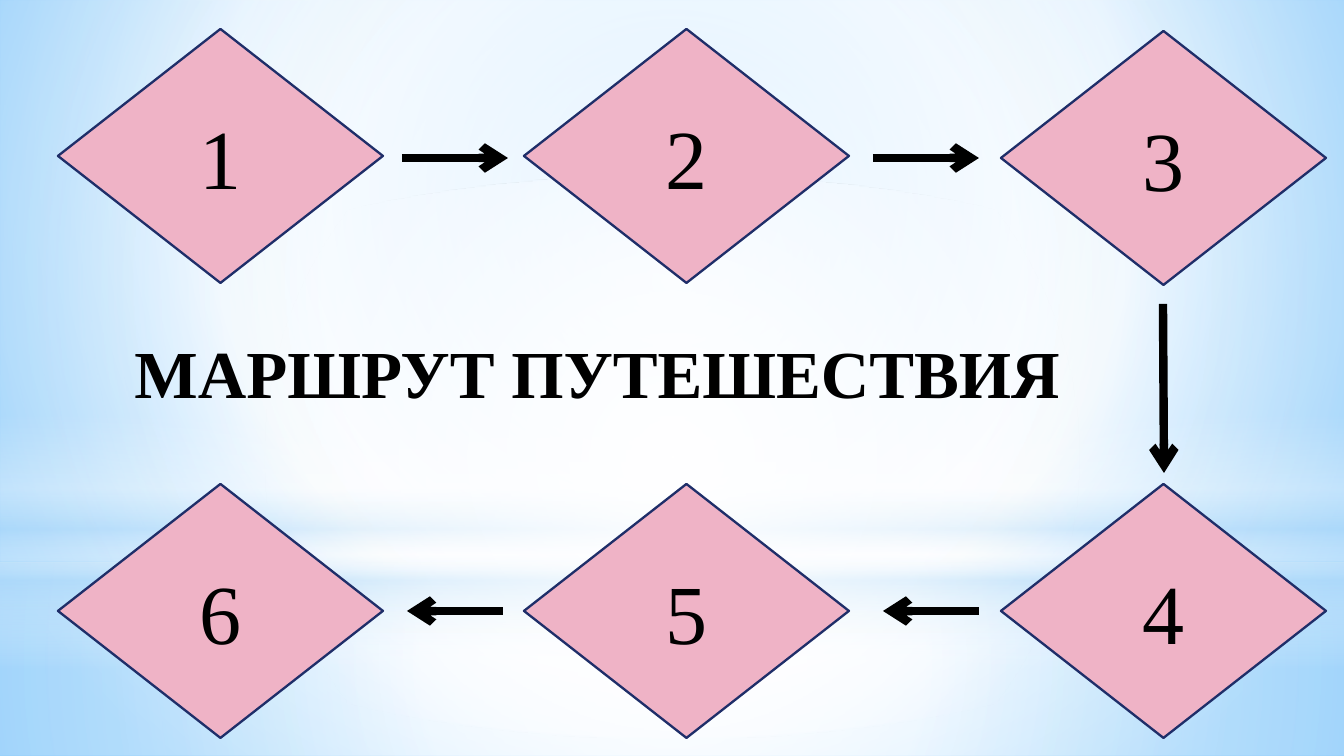
from lxml.etree import SubElement
from pptx import Presentation
from pptx.dml.color import RGBColor
from pptx.enum.shapes import MSO_CONNECTOR as Connector, MSO_SHAPE as Shape
from pptx.enum.text import MSO_ANCHOR as Anchor, PP_ALIGN as Align
from pptx.oxml.ns import qn
from pptx.util import Emu, Pt

EMU_PER_PX = 914400 / 134.4
WIDTH, HEIGHT = 1344, 756
FONT = "Times New Roman"
BLACK, WHITE, SKY = "000000", "FFFFFF", "B4DCFA"
PINK, NAVY = "EFB3C6", "1F2E69"
CENTRE = (50, 50, 50, 50)


def px(*lengths):
    return [Emu(round(length * EMU_PER_PX)) for length in lengths]


def color(hex_code):
    return RGBColor.from_string(hex_code)


def set_gradient(fill, element, stops, focus=None):
    """Fill with (position %, colour, opacity %) stops, round a focus or top-down."""
    fill.gradient()
    gradient = element.find(".//" + qn("a:gradFill"))
    for child in list(gradient):
        gradient.remove(child)
    stop_list = SubElement(gradient, qn("a:gsLst"))
    for position, hex_code, opacity in stops:
        stop = SubElement(stop_list, qn("a:gs"), pos=str(position * 1000))
        tint = SubElement(stop, qn("a:srgbClr"), val=hex_code)
        if opacity < 100:
            SubElement(tint, qn("a:alpha"), val=str(opacity * 1000))
    if focus:
        path = SubElement(gradient, qn("a:path"), path="circle")
        insets = {side: str(inset * 1000) for side, inset in zip("ltrb", focus)}
        SubElement(path, qn("a:fillToRect"), **insets)
    else:
        SubElement(gradient, qn("a:lin"), ang="5400000", scaled="0")


class RouteSlide:
    def __init__(self, deck):
        self.slide = deck.slides.add_slide(deck.slide_layouts[5])
        self.shapes = self.slide.shapes

    def style_text(self, paragraph, size, bold=False):
        font = paragraph.font
        font.name, font.size, font.bold = FONT, Pt(size), bold
        font.color.rgb = color(BLACK)

    def background(self, stops, focus):
        set_gradient(self.slide.background.fill, self.slide.element, stops, focus)

    def glow(self, kind, top, height, stops, focus=None):
        band = self.shapes.add_shape(kind, *px(0, top, WIDTH, height))
        band.shadow.inherit = False
        band.line.fill.background()
        set_gradient(band.fill, band.element, stops, focus)

    def stop(self, number, left, top):
        diamond = self.shapes.add_shape(Shape.DIAMOND, *px(left, top, 325, 254))
        diamond.shadow.inherit = False
        diamond.fill.solid()
        diamond.fill.fore_color.rgb = color(PINK)
        diamond.line.color.rgb = color(NAVY)
        diamond.line.width = Pt(1.25)
        frame = diamond.text_frame
        frame.vertical_anchor = Anchor.MIDDLE
        paragraph = frame.paragraphs[0]
        paragraph.text = str(number)
        paragraph.alignment = Align.CENTER
        self.style_text(paragraph, 45)

    def arrow(self, *ends):
        arrow = self.shapes.add_connector(Connector.STRAIGHT, *px(*ends))
        arrow.line.color.rgb = color(BLACK)
        arrow.line.width = Pt(4.5)
        SubElement(arrow.line._get_or_add_ln(), qn("a:tailEnd"), type="arrow")
        SubElement(arrow.element.spPr, qn("a:effectLst"))

    def title(self, text, left, top, width, height):
        """Place the title in front of everything drawn so far."""
        title = self.shapes.title
        title.element.getparent().append(title.element)
        title.left, title.top, title.width, title.height = px(left, top, width, height)
        frame = title.text_frame
        frame.word_wrap = False
        frame.vertical_anchor = Anchor.TOP
        paragraph = frame.paragraphs[0]
        paragraph.text = text
        paragraph.alignment = Align.LEFT
        self.style_text(paragraph, 36, bold=True)


def main():
    deck = Presentation()
    deck.slide_width, deck.slide_height = px(WIDTH, HEIGHT)
    route = RouteSlide(deck)

    route.background([(0, "9ED5FF", 100), (60, WHITE, 100), (100, "5BB9FF", 100)],
                     (20, 10, 20, 60))
    route.glow(Shape.RECTANGLE, 563, 193,
               [(0, WHITE, 91), (37, WHITE, 76), (100, SKY, 79)], CENTRE)
    route.glow(Shape.RECTANGLE, 0, 563,
               [(0, WHITE, 89), (48, WHITE, 62), (100, SKY, 79)], CENTRE)
    route.glow(Shape.RECTANGLE, 415, 253,
               [(0, WHITE, 0), (29, WHITE, 30), (45, SKY, 40),
                (55, WHITE, 26), (65, SKY, 60), (100, WHITE, 0)])
    route.glow(Shape.OVAL, 176, 563, [(0, WHITE, 100), (56, WHITE, 0)], CENTRE)

    columns = (58, 524, 1001)
    stops = list(zip(columns, (29, 29, 31)))
    stops += [(left, 484) for left in reversed(columns)]
    for number, (left, top) in enumerate(stops, 1):
        route.stop(number, left, top)

    for ends in ((402, 158, 508, 158), (873, 158, 979, 158),
                 (1163, 304, 1164, 473),
                 (979, 611, 883, 611), (503, 611, 407, 611)):
        route.arrow(*ends)

    route.title("МАРШРУТ ПУТЕШЕСТВИЯ", 121, 325, 962, 95)
    deck.save("out.pptx")


if __name__ == "__main__":
    main()
